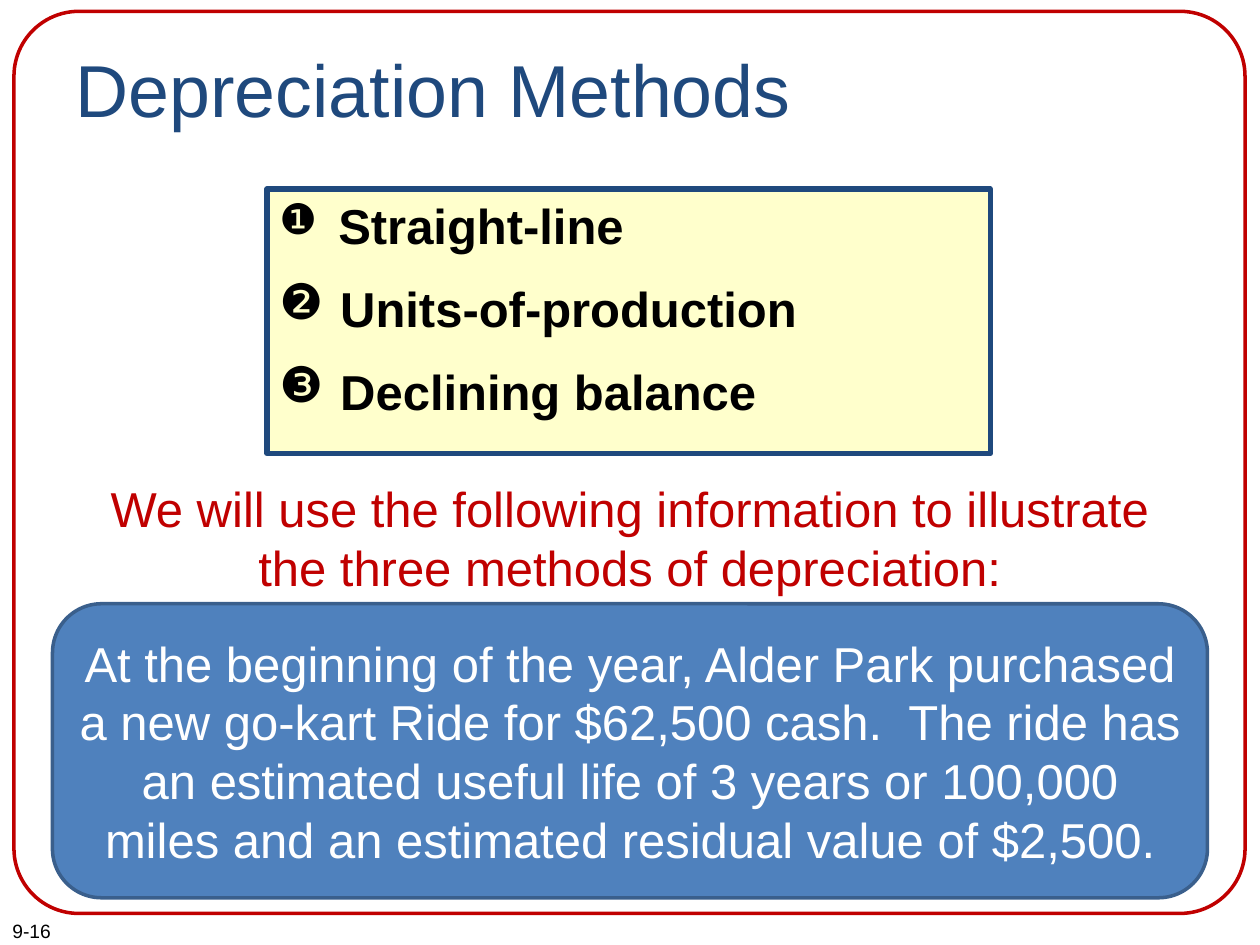
"""Build the Depreciation Methods slide."""
from dataclasses import dataclass

from lxml.etree import SubElement
from pptx import Presentation
from pptx.dml.color import RGBColor
from pptx.enum.shapes import MSO_SHAPE as SHAPE
from pptx.enum.text import MSO_ANCHOR as ANCHOR, PP_ALIGN as ALIGN
from pptx.oxml.ns import qn
from pptx.util import Pt

COLORS = {
    "black": "000000", "white": "FFFFFF", "red": "C00000", "navy": "1F497D",
    "cream": "FFFFCC", "blue": "4F81BD", "steel": "3A5F8C",
}
FONT = "Arial"
METHODS = [("❶", "Straight-line"), ("❷", "Units-of-production"),
           ("❸", "Declining balance")]
FACTS = ("At the beginning of the year, Alder Park purchased a new go-kart Ride "
         "for $62,500 cash.  The ride has an estimated useful life of 3 years or "
         "100,000 miles and an estimated residual value of $2,500.")


@dataclass(frozen=True)
class Box:
    left: float
    top: float
    width: float
    height: float

    def lengths(self) -> tuple:
        return tuple(Pt(v) for v in (self.left, self.top, self.width, self.height))


@dataclass(frozen=True)
class Panel:
    box: Box
    kind: SHAPE
    line: str
    weight: float
    fill: str | None = None
    radius: float | None = None


def rgb(name: str) -> RGBColor:
    return RGBColor.from_string(COLORS[name])


def style(r, size: float, color: str, bold: bool = False) -> None:
    r.font.name, r.font.size, r.font.bold = FONT, Pt(size), bold
    r.font.color.rgb = rgb(color)


def write(tf, text: str, size: float, color: str, align=ALIGN.LEFT,
          anchor=ANCHOR.TOP, wrap: bool = True) -> None:
    tf.word_wrap, tf.vertical_anchor = wrap, anchor
    p = tf.paragraphs[0]
    p.text, p.alignment = text, align
    for r in p.runs:
        style(r, size, color)


def add_panel(s, panel: Panel):
    sp = s.shapes.add_shape(panel.kind, *panel.box.lengths())
    sp.shadow.inherit = False
    if panel.fill:
        sp.fill.solid()
        sp.fill.fore_color.rgb = rgb(panel.fill)
    else:
        sp.fill.background()
    sp.line.color.rgb, sp.line.width = rgb(panel.line), Pt(panel.weight)
    if panel.radius is not None:
        sp.adjustments[0] = panel.radius
    return sp


def add_bullet(p, char: str, indent: float) -> None:
    pPr = p._p.get_or_add_pPr()
    pPr.set("marL", str(Pt(indent)))
    pPr.set("indent", str(Pt(-indent)))
    color = SubElement(pPr, qn("a:buClr"))
    SubElement(color, qn("a:srgbClr")).set("val", COLORS["black"])
    SubElement(pPr, qn("a:buChar")).set("char", char)


def add_methods(tf) -> None:
    tf.word_wrap, tf.vertical_anchor = True, ANCHOR.TOP
    for i, (char, name) in enumerate(METHODS):
        p = tf.add_paragraph() if i else tf.paragraphs[0]
        p.alignment = ALIGN.LEFT
        p.space_before = Pt(14 if i else 0)
        add_bullet(p, char, 27)
        parts = [(f" {name}", 28)] if i else [(" ", 24), (name, 28)]
        for text, size in parts:
            r = p.add_run()
            r.text = text
            style(r, size, "black", bold=True)


def add_text(s, box: Box, *args, **kwargs) -> None:
    write(s.shapes.add_textbox(*box.lengths()).text_frame, *args, **kwargs)


def main() -> None:
    prs = Presentation()
    prs.slide_width, prs.slide_height = Pt(720), Pt(540)
    s = prs.slides.add_slide(prs.slide_layouts[5])

    add_text(s, Box(0, 522, 102, 21), "9-16", 11, "black")
    add_panel(s, Panel(Box(8, 6.5, 703.5, 515.5), SHAPE.ROUNDED_RECTANGLE,
                       "red", 2, radius=0.072))
    methods = add_panel(s, Panel(Box(152.6, 108, 413.3, 151.2), SHAPE.RECTANGLE,
                                 "navy", 3, "cream"))
    add_methods(methods.text_frame)

    title = s.shapes.title
    title.left, title.top, title.width, title.height = Box(36, 21.6, 648, 90).lengths()
    write(title.text_frame, "Depreciation Methods", 42, "navy")

    facts = add_panel(s, Panel(Box(30, 345, 660, 168), SHAPE.ROUNDED_RECTANGLE,
                               "steel", 2, "blue"))
    write(facts.text_frame, FACTS, 28, "white", ALIGN.CENTER, ANCHOR.MIDDLE)
    add_text(s, Box(52, 270, 615.6, 75),
             "We will use the following information to illustrate\v"
             "the three methods of depreciation:",
             28, "red", ALIGN.CENTER, wrap=False)
    prs.save("out.pptx")


if __name__ == "__main__":
    main()
